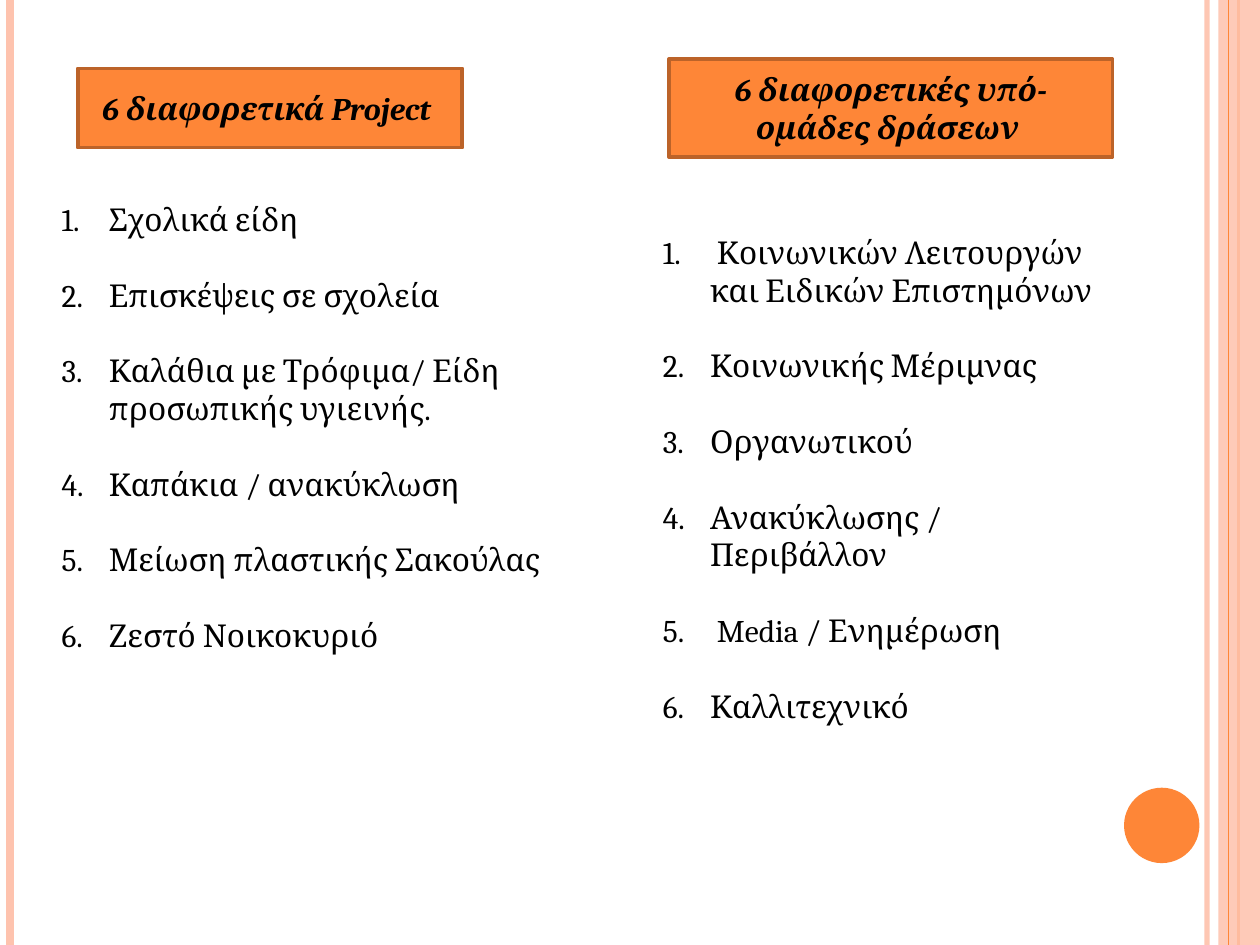
import pptx
import pptx.dml.color
import pptx.enum.shapes
import pptx.enum.text
import pptx.oxml
import pptx.oxml.ns
import pptx.util
from pptx.util import Cm

SLIDE_WIDTH, SLIDE_HEIGHT = 25.4, 19.05


def color(hex_string):
    return pptx.dml.color.RGBColor.from_string(hex_string)


def add_child(parent, tag, **attributes):
    child = pptx.oxml.parse_xml(f"<a:{tag} {pptx.oxml.ns.nsdecls('a')}/>")
    for name, value in attributes.items():
        child.set(name, str(value))
    parent.append(child)


class SlideBuilder:
    font = "Cambria"
    size = 18
    line_gap = 21.6
    indent = 0.95
    orange = "FE8637"
    border = "BC6329"
    peach = "FEC3AE"
    black = "000000"

    def __init__(self, presentation):
        self.slide = presentation.slides.add_slide(presentation.slide_layouts[3])
        title = self.slide.shapes.title._element
        title.getparent().remove(title)

    def set_opacity(self, shape, percent):
        for element in shape._element.iter(pptx.oxml.ns.qn("a:srgbClr")):
            add_child(element, "alpha", val=percent * 1000)

    def stripe(self, x, hex_string, width, opacity=100):
        connector = self.slide.shapes.add_connector(
            pptx.enum.shapes.MSO_CONNECTOR.STRAIGHT, Cm(x), Cm(0), Cm(x), Cm(SLIDE_HEIGHT))
        connector.line.color.rgb = color(hex_string)
        connector.line.width = pptx.util.Pt(width)
        add_child(connector._element.spPr, "effectLst")
        if opacity < 100:
            self.set_opacity(connector, opacity)

    def filled_shape(self, kind, left, top, width, height, hex_string):
        shape = self.slide.shapes.add_shape(kind, Cm(left), Cm(top), Cm(width), Cm(height))
        shape.shadow.inherit = False
        shape.fill.solid()
        shape.fill.fore_color.rgb = color(hex_string)
        shape.line.fill.background()
        return shape

    def add_run(self, paragraph, text, emphasis=False):
        run = paragraph.add_run()
        run.text = text
        run.font.name = self.font
        run.font.size = pptx.util.Pt(self.size)
        run.font.color.rgb = color(self.black)
        run.font.bold = run.font.italic = emphasis

    def heading(self, left, top, width, height, text):
        shape = self.filled_shape(
            pptx.enum.shapes.MSO_SHAPE.RECTANGLE, left, top, width, height, self.orange)
        shape.line.color.rgb = color(self.border)
        shape.line.width = pptx.util.Pt(2)
        shape.text_frame.word_wrap = True
        shape.text_frame.vertical_anchor = pptx.enum.text.MSO_ANCHOR.MIDDLE
        paragraph = shape.text_frame.paragraphs[0]
        paragraph.alignment = pptx.enum.text.PP_ALIGN.CENTER
        self.add_run(paragraph, text, emphasis=True)

    def numbered_list(self, placeholder_index, left, top, width, height, items):
        shape = self.slide.placeholders[placeholder_index]
        shape.left, shape.top = Cm(left), Cm(top)
        shape.width, shape.height = Cm(width), Cm(height)
        frame = shape.text_frame
        frame.word_wrap = True
        frame.auto_size = pptx.enum.text.MSO_AUTO_SIZE.NONE
        for index, item in enumerate(items):
            paragraph = frame.add_paragraph() if index else frame.paragraphs[0]
            properties = paragraph._p.get_or_add_pPr()
            properties.set("marL", str(Cm(self.indent)))
            properties.set("indent", str(-Cm(self.indent)))
            add_child(properties, "buFont", typeface=self.font)
            add_child(properties, "buAutoNum", type="arabicPeriod")
            paragraph.space_before = pptx.util.Pt(self.line_gap if index else 0)
            self.add_run(paragraph, item)


def main():
    presentation = pptx.Presentation()
    presentation.slide_width = Cm(SLIDE_WIDTH)
    presentation.slide_height = Cm(SLIDE_HEIGHT)
    builder = SlideBuilder(presentation)
    shapes = pptx.enum.shapes.MSO_SHAPE

    builder.stripe(24.33, builder.peach, 3, opacity=93)
    builder.stripe(0.2, builder.peach, 4.5)
    builder.stripe(24.97, builder.orange, 1.5)
    band = builder.filled_shape(shapes.RECTANGLE, 24.56, 0, 0.84, SLIDE_HEIGHT, builder.peach)
    builder.set_opacity(band, 87)
    builder.stripe(24.77, builder.orange, 0.75)
    builder.filled_shape(shapes.OVAL, 22.66, 15.88, 1.52, 1.52, builder.orange)

    builder.numbered_list(1, 0.99, 3.91, 10.92, 11.81, [
        "Σχολικά είδη",
        "Επισκέψεις σε σχολεία",
        "Καλάθια με Τρόφιμα/ Είδη προσωπικής υγιεινής.",
        "Καπάκια / ανακύκλωση",
        "Μείωση πλαστικής Σακούλας",
        "Ζεστό Νοικοκυριό",
    ])
    builder.heading(1.57, 1.38, 7.75, 1.6, "6 διαφορετικά Project ")
    builder.heading(13.49, 1.19, 8.94, 1.98, "6 διαφορετικές υπό-ομάδες δράσεων ")
    builder.numbered_list(2, 13.11, 4.57, 9.53, 9.5, [
        " Κοινωνικών Λειτουργών και Ειδικών Επιστημόνων",
        "Κοινωνικής Μέριμνας",
        "Οργανωτικού",
        "Ανακύκλωσης / Περιβάλλον",
        " Media / Ενημέρωση",
        "Καλλιτεχνικό",
    ])
    presentation.save("out.pptx")


if __name__ == "__main__":
    main()
